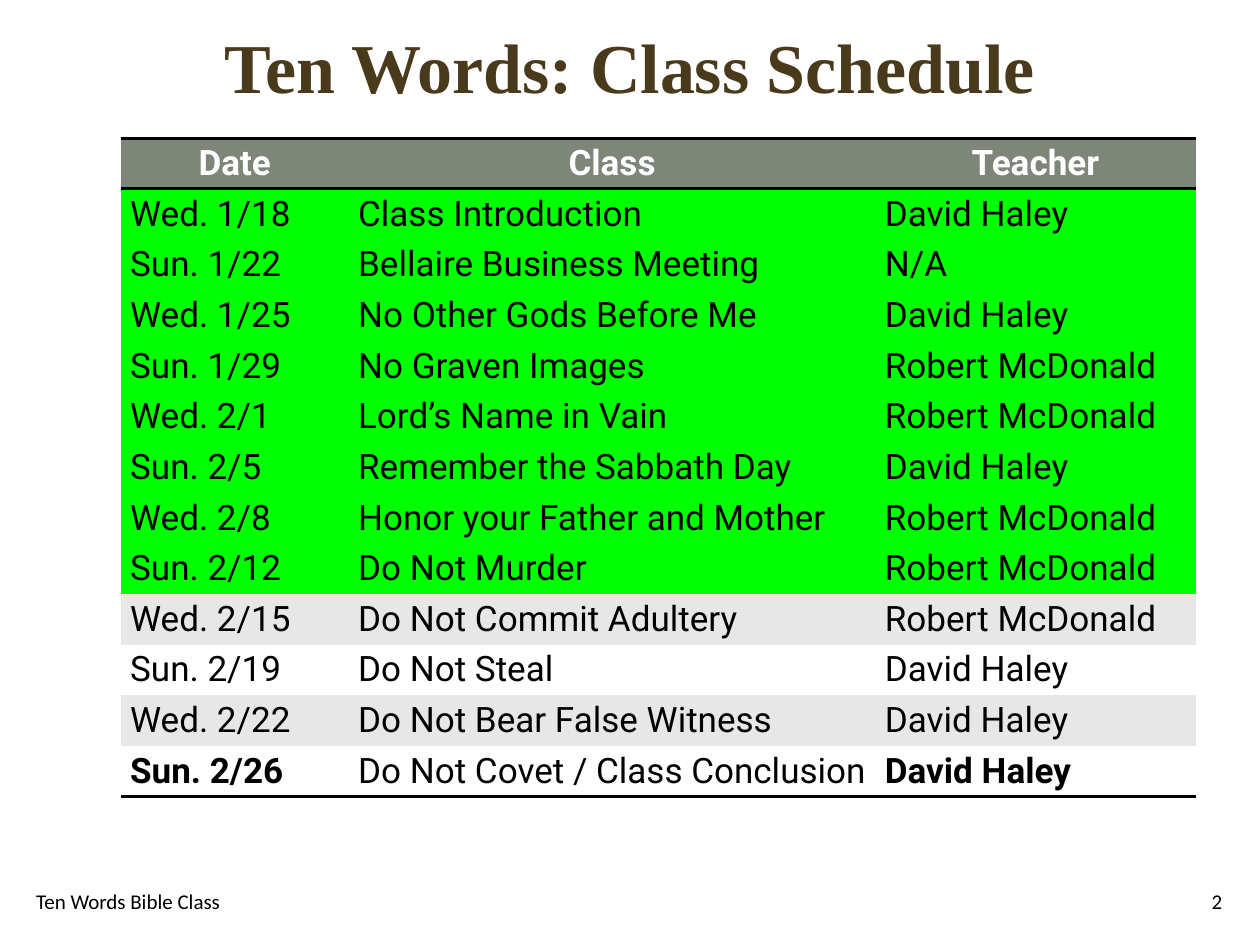
from lxml import etree
from pptx import Presentation
from pptx.dml.color import RGBColor
from pptx.enum.text import MSO_ANCHOR, PP_ALIGN
from pptx.oxml.ns import qn
from pptx.util import Pt

LEFT, CENTER, RIGHT = PP_ALIGN.LEFT, PP_ALIGN.CENTER, PP_ALIGN.RIGHT
MIDDLE = MSO_ANCHOR.MIDDLE
PLAIN = "{2D5ABB26-0587-4C30-8999-92F81FD0307C}"  # table style without lines
BLACK, WHITE, BROWN = "000000", "FFFFFF", "4A3A1C"
OLIVE, GREEN, GRAY = "7E8679", "00FF00", "E7E7E7"
DONE = 8  # classes already held

HEADS = ("Date", "Class", "Teacher")
ROWS = (
    ("Wed. 1/18", "Class Introduction", "David Haley"),
    ("Sun. 1/22", "Bellaire Business Meeting", "N/A"),
    ("Wed. 1/25", "No Other Gods Before Me", "David Haley"),
    ("Sun. 1/29", "No Graven Images", "Robert McDonald"),
    ("Wed. 2/1", "Lord’s Name in Vain", "Robert McDonald"),
    ("Sun. 2/5", "Remember the Sabbath Day", "David Haley"),
    ("Wed. 2/8", "Honor your Father and Mother", "Robert McDonald"),
    ("Sun. 2/12", "Do Not Murder", "Robert McDonald"),
    ("Wed. 2/15", "Do Not Commit Adultery", "Robert McDonald"),
    ("Sun. 2/19", "Do Not Steal", "David Haley"),
    ("Wed. 2/22", "Do Not Bear False Witness", "David Haley"),
    ("Sun. 2/26", "Do Not Covet / Class Conclusion", "David Haley"),
)


def color(code):
    return RGBColor.from_string(code)


def write(frame, text, face, size, tint=BLACK, align=LEFT, bold=False):
    frame.text = text
    frame.word_wrap = True
    para = frame.paragraphs[0]
    para.alignment = align
    font = para.font
    font.name, font.size, font.bold = face, Pt(size), bold
    font.color.rgb = color(tint)
    return para


def add_title(slide, text):
    title = slide.shapes.title
    title.left, title.top = Pt(49.5), Pt(10.8)
    title.width, title.height = Pt(621), Pt(59)
    para = write(title.text_frame, text, "Times New Roman", 40, BROWN, CENTER, True)
    para.line_spacing = 0.9
    title.text_frame.vertical_anchor = MIDDLE


def add_note(slide, text, left, width, align):
    box = slide.shapes.add_textbox(Pt(left), Pt(500.4), Pt(width), Pt(28.8))
    write(box.text_frame, text, "Calibri", 12, align=align)
    box.text_frame.vertical_anchor = MIDDLE


def rule(cell, side):
    """Draw a black 2 pt line on one side of a cell (lnT or lnB)."""
    props = cell._tc.get_or_add_tcPr()
    line = etree.SubElement(props, qn("a:" + side), w=str(Pt(2)))
    fill = etree.SubElement(line, qn("a:solidFill"))
    etree.SubElement(fill, qn("a:srgbClr"), val=BLACK)


def shade(row):
    """Fill for a table row: header, held classes, then bands."""
    if row == 0:
        return OLIVE
    if row <= DONE:
        return GREEN
    return GRAY if row % 2 else WHITE


def add_plan(slide):
    data = (HEADS,) + ROWS
    last = len(data) - 1
    frame = slide.shapes.add_table(
        len(data), len(HEADS), Pt(69), Pt(79), Pt(614), Pt(382))
    table = frame.table
    table.horz_banding = False
    table._tbl.tblPr.find(qn("a:tableStyleId")).text = PLAIN
    for col, width in zip(table.columns, (130.3, 301, 182.9)):
        col.width = Pt(width)
    for row in table.rows:
        row.height = Pt(21.6)
    frame.height = Pt(382.3)

    for r, texts in enumerate(data):
        for c, text in enumerate(texts):
            cell = table.cell(r, c)
            cell.margin_left = cell.margin_right = Pt(5.4)
            cell.margin_top = cell.margin_bottom = Pt(2.7)
            head = r == 0
            bold = head or (r == last and c != 1)
            write(cell.text_frame, text, "Roboto", 20,
                  WHITE if head else BLACK, CENTER if head else LEFT, bold)
            if head:
                rule(cell, "lnT")
            if r in (0, last):
                rule(cell, "lnB")
            cell.fill.solid()
            cell.fill.fore_color.rgb = color(shade(r))


def main():
    deck = Presentation()
    deck.slide_width, deck.slide_height = Pt(720), Pt(540)
    slide = deck.slides.add_slide(deck.slide_layouts[5])
    add_title(slide, "Ten Words: Class Schedule")
    add_plan(slide)
    # Footer and page number
    add_note(slide, "Ten Words Bible Class", 13.5, 243, LEFT)
    add_note(slide, "2", 543.5, 162, RIGHT)
    deck.save("out.pptx")


if __name__ == "__main__":
    main()
